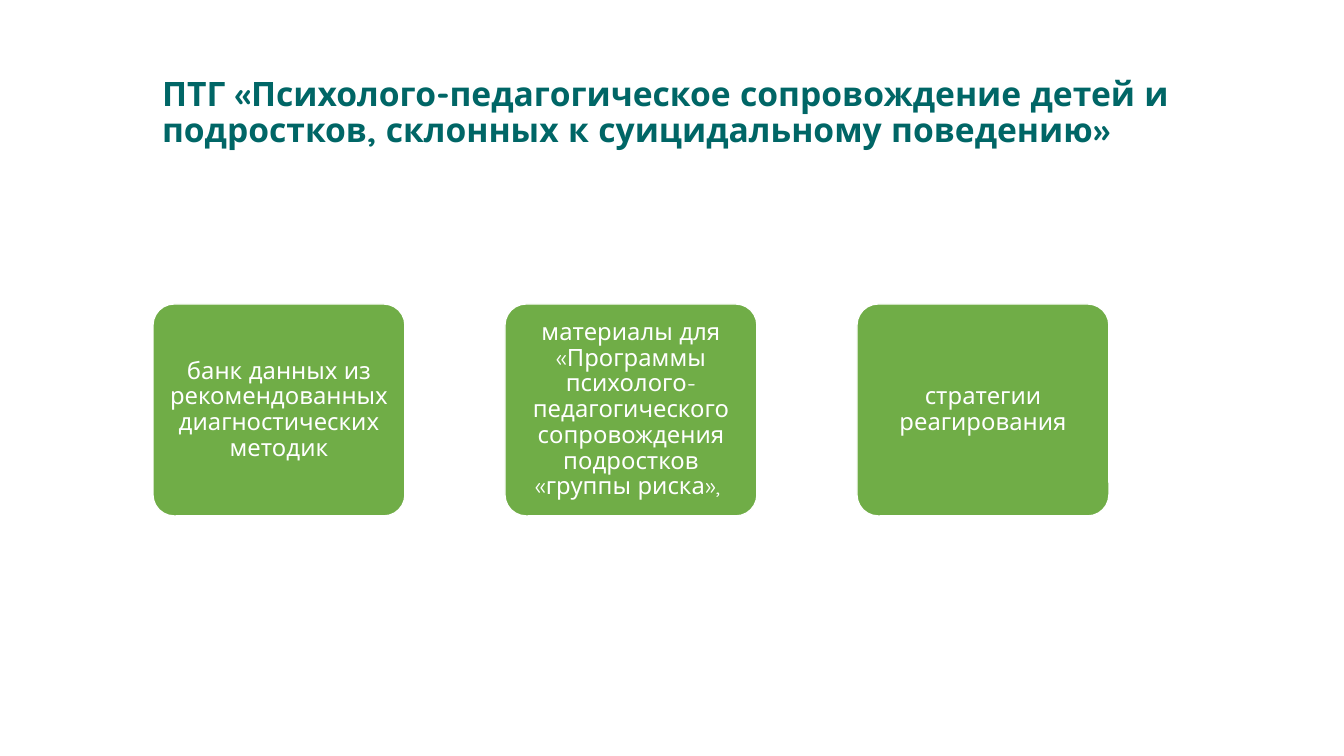
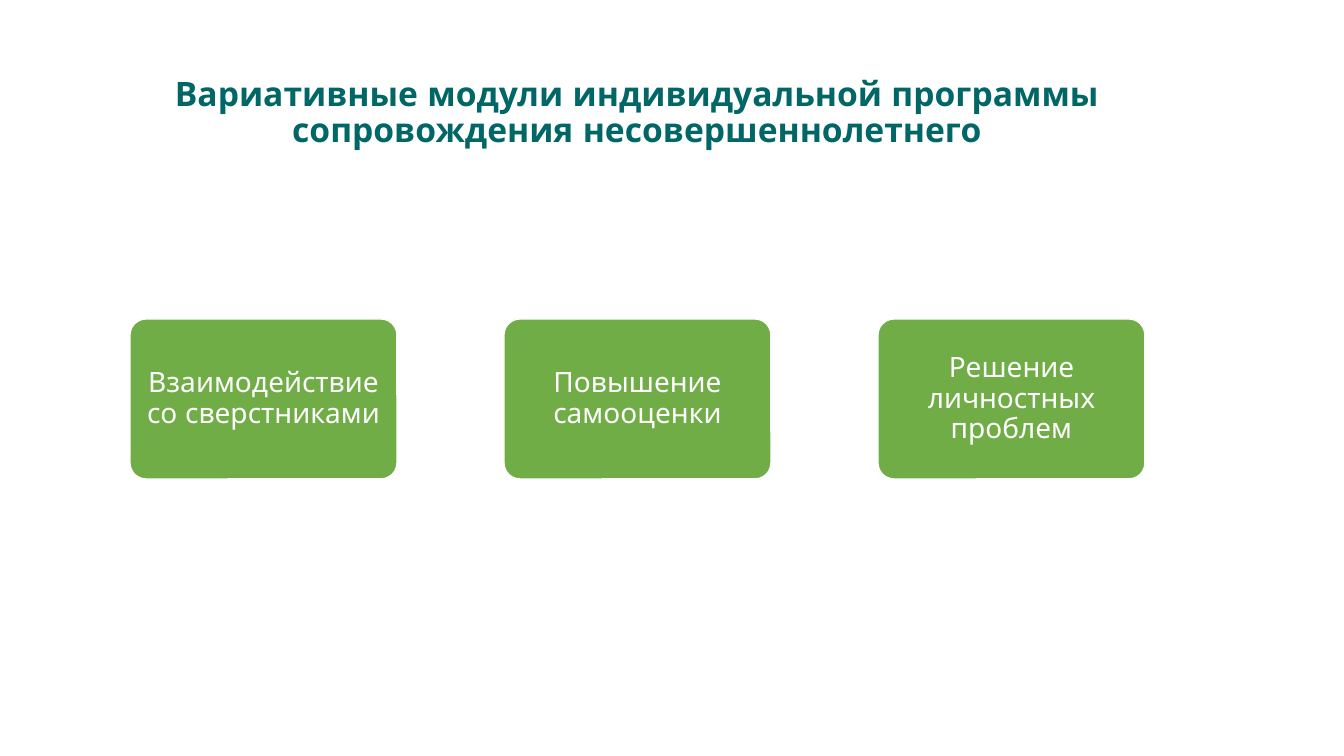
from pptx import Presentation
from pptx.dml.color import RGBColor
from pptx.enum.shapes import MSO_SHAPE
from pptx.enum.text import MSO_ANCHOR, MSO_AUTO_SIZE, PP_ALIGN
from pptx.util import Emu, Pt

SLIDE_WIDTH, SLIDE_HEIGHT = 1344, 756
EMU_PER_PX = 12192000 / SLIDE_WIDTH
FONT = "Quicksand"
COLORS = {"title": "006666", "card": "70AD47", "white": "FFFFFF"}


def px(length):
    """Turn a length in px into EMU."""
    return Emu(round(length * EMU_PER_PX))


def color(name):
    """Return the named colour of the palette."""
    return RGBColor.from_string(COLORS[name])


def write(shape, text, *, size, ink, bold=False, align=PP_ALIGN.LEFT,
          anchor=MSO_ANCHOR.MIDDLE, inset=None):
    """Put formatted text into a shape."""
    frame = shape.text_frame
    frame.word_wrap = True
    frame.auto_size = MSO_AUTO_SIZE.NONE
    frame.vertical_anchor = anchor
    if inset is not None:
        frame.margin_left = frame.margin_right = px(inset)
        frame.margin_top = frame.margin_bottom = px(inset)
    para = frame.paragraphs[0]
    para.alignment = align
    para.line_spacing = 0.9
    span = para.add_run()
    span.text = text
    span.font.name = FONT
    span.font.size = Pt(size)
    span.font.bold = bold
    span.font.color.rgb = color(ink)


class CardDeck:
    """Presentation style together with the current slide."""

    def __init__(self):
        """Start an empty wide deck."""
        self.deck = Presentation()
        self.deck.slide_width = px(SLIDE_WIDTH)
        self.deck.slide_height = px(SLIDE_HEIGHT)
        self.page = None

    def add_page(self):
        """Begin a new title-only slide."""
        layout = self.deck.slide_layouts.get_by_name("Title Only")
        self.page = self.deck.slides.add_slide(layout)

    def title(self, text, left, top, width, height, align=PP_ALIGN.LEFT):
        """Place and format the title placeholder."""
        box = self.page.shapes.title
        box.left, box.top = px(left), px(top)
        box.width, box.height = px(width), px(height)
        write(box, text, size=24, ink="title", bold=True, align=align,
              anchor=MSO_ANCHOR.BOTTOM)

    def card(self, text, left, top, width, height, size, inset):
        """Draw one rounded card with centred text."""
        box = self.page.shapes.add_shape(
            MSO_SHAPE.ROUNDED_RECTANGLE, px(left), px(top), px(width), px(height))
        box.adjustments[0] = 0.1
        box.shadow.inherit = False
        box.fill.solid()
        box.fill.fore_color.rgb = color("card")
        box.line.color.rgb = color("white")
        box.line.width = Pt(1)
        write(box, text, size=size, ink="white", align=PP_ALIGN.CENTER, inset=inset)

    def card_row(self, texts, left, top, width, height, gap, size, inset):
        """Draw equally spaced cards in a row."""
        for index, text in enumerate(texts):
            self.card(text, left + index * (width + gap), top, width, height,
                      size, inset)


def main():
    """Build and save the deck."""
    show = CardDeck()

    show.add_page()
    show.title("ПТГ «Психолого-педагогическое сопровождение детей и подростков, "
               "склонных к суицидальному поведению»", 152, 57, 1032, 98)
    show.card_row(
        ["банк данных из рекомендованных диагностических методик",
         "материалы для «Программы психолого-педагогического сопровождения "
         "подростков «группы риска», ",
         "стратегии реагирования"],
        left=153, top=304, width=252, height=212, gap=100, size=17, inset=7)

    show.add_page()
    show.title("Вариативные модули индивидуальной программы сопровождения "
               "несовершеннолетнего", 129, 49, 1016, 106, align=PP_ALIGN.CENTER)
    show.card_row(
        ["Взаимодействие со сверстниками",
         "Повышение самооценки",
         "Решение личностных проблем"],
        left=130, top=319, width=267, height=160, gap=107, size=20, inset=8)

    show.deck.save("out.pptx")


if __name__ == "__main__":
    main()
